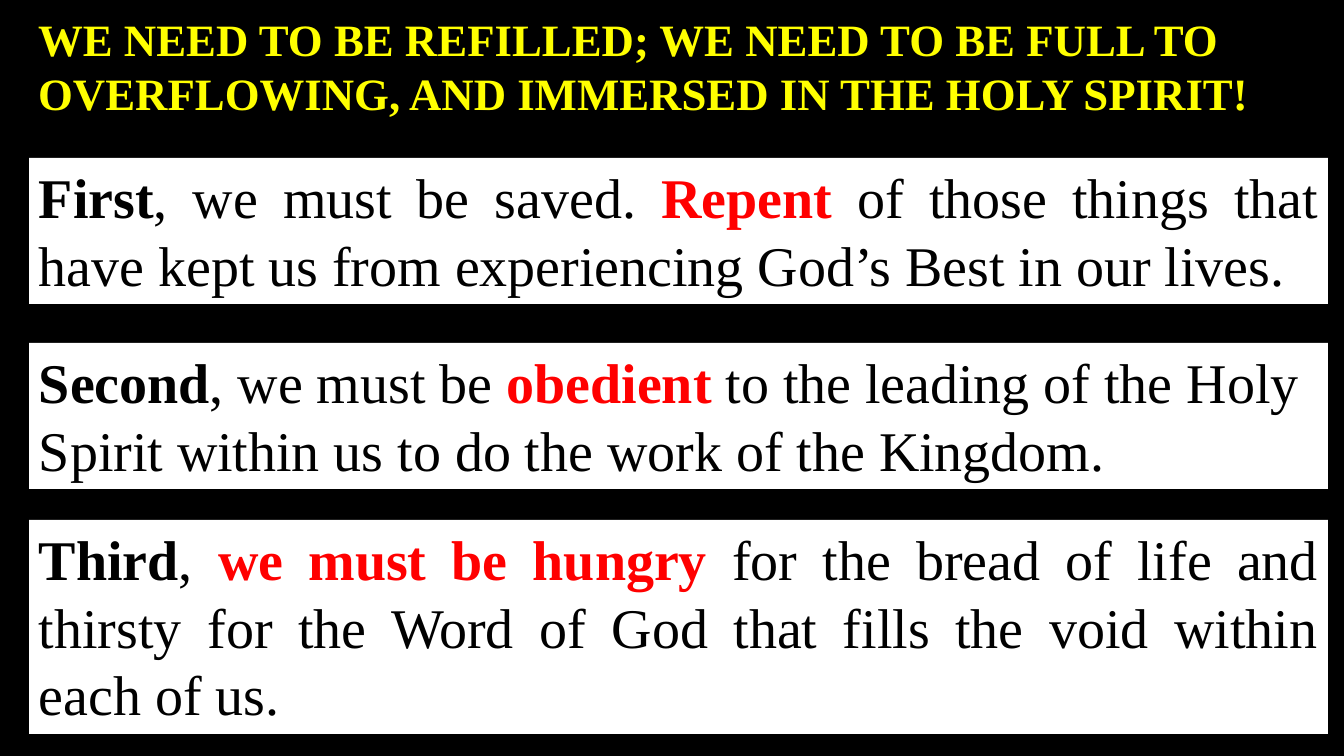
"""Build the slide on three steps to being refilled with the Holy Spirit."""
from dataclasses import dataclass

from pptx import Presentation
from pptx.dml.color import RGBColor
from pptx.enum.text import MSO_ANCHOR, MSO_AUTO_SIZE, PP_ALIGN as Align
from pptx.util import Pt

HEAD = [("WE NEED TO BE REFILLED; WE NEED TO BE FULL TO OVERFLOWING, "
         "AND IMMERSED IN THE HOLY SPIRIT!", "head")]
STEPS = [
    (158, 146, Align.JUSTIFY, [
        ("First", "lead"), (", we must be saved. ", "text"),
        ("Repent", "key"),
        (" of those things that have kept us from experiencing "
         "God’s Best in our lives.", "text")]),
    (343, 146, Align.LEFT, [
        ("Second", "lead"), (", we must be ", "text"),
        ("obedient", "key"),
        (" to the leading of the Holy Spirit within us to do the work "
         "of the Kingdom.", "text")]),
    (520, 214, Align.JUSTIFY, [
        ("Third", "lead"), (", ", "text"),
        ("we must be hungry ", "key"),
        ("for the bread of life and thirsty for the Word of God that "
         "fills the void within each of us.", "text")]),
]


@dataclass(frozen=True)
class Theme:
    font: str = "Times New Roman"
    black: RGBColor = RGBColor(0, 0, 0)
    white: RGBColor = RGBColor(255, 255, 255)
    yellow: RGBColor = RGBColor(255, 255, 0)
    red: RGBColor = RGBColor(255, 0, 0)
    large: int = 40
    small: int = 32


THEME = Theme()
STYLES = {
    "head": (THEME.yellow, True),
    "lead": (THEME.black, True),
    "text": (THEME.black, False),
    "key": (THEME.red, True),
}


def px(*nums):
    """Turn px into EMU."""
    return [round(num * 914400 / 100.8) for num in nums]


def write(shape, runs, size=THEME.large, align=Align.LEFT, fill=THEME.white,
          fit=MSO_AUTO_SIZE.SHAPE_TO_FIT_TEXT):
    """Fill a shape with styled runs of text."""
    shape.fill.solid()
    shape.fill.fore_color.rgb = fill
    frame = shape.text_frame
    frame.word_wrap = True
    frame.auto_size = fit
    frame.vertical_anchor = MSO_ANCHOR.TOP
    para = frame.paragraphs[0]
    para.alignment = align
    for words, style in runs:
        run = para.add_run()
        run.text = words
        font = run.font
        font.name, font.size = THEME.font, Pt(size)
        font.color.rgb, font.bold = STYLES[style]


def main():
    """Lay out the title and the three steps."""
    deck = Presentation()
    deck.slide_width, deck.slide_height = px(1344, 756)
    slide = deck.slides.add_slide(deck.slide_layouts[5])
    slide.background.fill.solid()
    slide.background.fill.fore_color.rgb = THEME.black

    title = slide.shapes.title
    title.left, title.top, title.width, title.height = px(28, 7, 1238, 119)
    write(title, HEAD, size=THEME.small, fill=THEME.black)

    for top, height, align, runs in STEPS:
        box = slide.shapes.add_textbox(*px(29, top, 1299, height))
        write(box, runs, align=align)

    deck.save("out.pptx")


if __name__ == "__main__":
    main()
